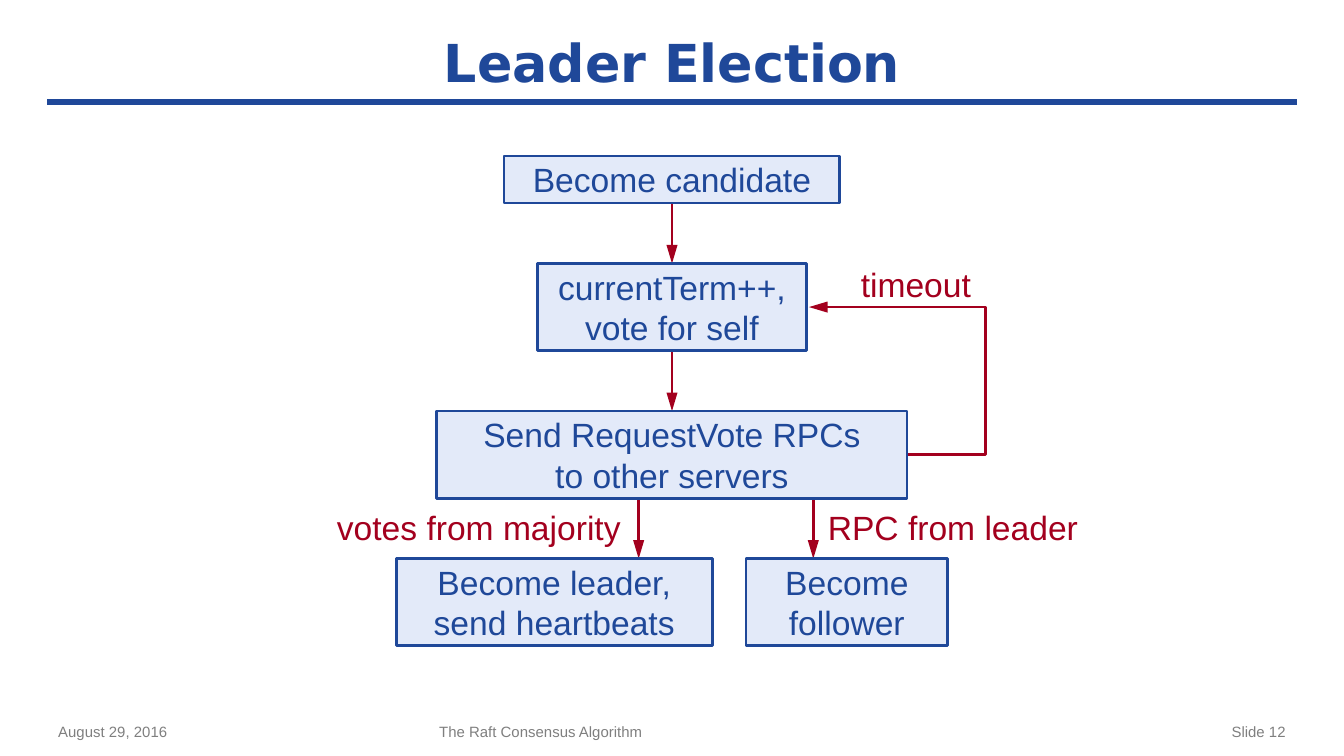
from lxml import etree
from pptx import Presentation
from pptx.dml.color import RGBColor
from pptx.enum.shapes import MSO_CONNECTOR, MSO_SHAPE
from pptx.enum.text import MSO_ANCHOR, PP_ALIGN
from pptx.oxml.ns import qn
from pptx.util import Cm, Pt

BLUE = RGBColor(0x1F, 0x48, 0x99)
PALE = RGBColor(0xE3, 0xEA, 0xF9)
RED = RGBColor(0xA3, 0x00, 0x1E)
GRAY = RGBColor(0x7F, 0x7F, 0x7F)
LEFT, CENTER, RIGHT = PP_ALIGN.LEFT, PP_ALIGN.CENTER, PP_ALIGN.RIGHT
TOP, MIDDLE = MSO_ANCHOR.TOP, MSO_ANCHOR.MIDDLE
STRAIGHT, RECT = MSO_CONNECTOR.STRAIGHT, MSO_SHAPE.RECTANGLE


class Deck:
    font = "Arial"
    size = 18
    leading = Pt(21.6)
    width = 1.5

    def __init__(self, s):
        self.s = s

    def fill_text(self, sp, lines, color, size, align, anchor, font=None,
                  bold=False, inset=0, leading=None, wrap=True):
        tf = sp.text_frame
        tf.word_wrap = wrap
        tf.vertical_anchor = anchor
        tf.margin_left = tf.margin_right = Cm(inset)
        tf.margin_top = tf.margin_bottom = 0
        for i, line in enumerate(lines):
            p = tf.add_paragraph() if i else tf.paragraphs[0]
            p.alignment = align
            p.line_spacing = leading
            r = p.add_run()
            r.text = line
            r.font.name = font or self.font
            r.font.size = Pt(size)
            r.font.bold = bold
            r.font.color.rgb = color

    def text(self, x, y, w, h, line, color, size, align, **style):
        sp = self.s.shapes.add_textbox(Cm(x), Cm(y), Cm(w), Cm(h))
        self.fill_text(sp, [line], color, size, align, MIDDLE, inset=0.25, **style)

    def label(self, x, y, w, line):
        sp = self.s.shapes.add_textbox(Cm(x), Cm(y), Cm(w), Cm(0.76))
        self.fill_text(sp, [line], RED, self.size, CENTER, TOP,
                       leading=self.leading, wrap=False)

    def box(self, x, y, w, h, *lines):
        sp = self.s.shapes.add_shape(RECT, Cm(x), Cm(y), Cm(w), Cm(h))
        sp.shadow.inherit = False
        sp.fill.solid()
        sp.fill.fore_color.rgb = PALE
        sp.line.color.rgb = BLUE
        sp.line.width = Pt(self.width)
        self.fill_text(sp, lines, BLUE, self.size, CENTER, MIDDLE,
                       leading=self.leading)

    def arrowhead(self, sp):
        ln = sp._element.spPr.find(qn("a:ln"))
        etree.SubElement(ln, qn("a:tailEnd"), type="triangle", w="med", len="lg")

    def line(self, x1, y1, x2, y2, color, width):
        sp = self.s.shapes.add_connector(STRAIGHT, Cm(x1), Cm(y1), Cm(x2), Cm(y2))
        sp.line.color.rgb = color
        sp.line.width = Pt(width)
        etree.SubElement(sp._element.spPr, qn("a:effectLst"))
        return sp

    def arrow_down(self, x, y, length):
        self.arrowhead(self.line(x, y, x, y + length, RED, self.width))

    def elbow_arrow(self, points):
        points = [(Cm(x), Cm(y)) for x, y in points]
        fb = self.s.shapes.build_freeform(*points[0])
        fb.add_line_segments(points[1:], close=False)
        sp = fb.convert_to_shape()
        sp.shadow.inherit = False
        sp.fill.background()
        sp.line.color.rgb = RED
        sp.line.width = Pt(self.width)
        self.arrowhead(sp)


def main():
    prs = Presentation()
    prs.slide_width, prs.slide_height = Cm(25.4), Cm(14.29)
    deck = Deck(prs.slides.add_slide(prs.slide_layouts[6]))

    deck.line(0.89, 1.93, 24.51, 1.93, BLUE, 3.5)
    deck.text(0.85, 0.41, 23.7, 1.52, "Leader Election", BLUE, 28, CENTER,
              font="DejaVu Sans", bold=True)

    one_line, two_lines, gap = 0.89, 1.65, 1.14
    start = 2.95
    term = start + one_line + gap
    send = term + two_lines + gap
    result = send + two_lines + gap
    middle = 12.7

    for x, y in ((middle, term), (middle, send), (12.07, result), (15.37, result)):
        deck.arrow_down(x, y - gap, gap)

    term_mid, send_mid = term + two_lines / 2, send + two_lines / 2
    deck.elbow_arrow([(17.15, send_mid), (18.62, send_mid),
                      (18.62, term_mid), (15.29, term_mid)])

    for y, w, h, lines in (
        (start, 6.35, one_line, ["Become candidate"]),
        (term, 5.08, two_lines, ["currentTerm++, vote for self"]),
        (send, 8.89, two_lines, ["Send RequestVote RPCs", "to other servers"]),
    ):
        deck.box(middle - w / 2, y, w, h, *lines)
    deck.box(7.49, result, 5.97, two_lines, "Become leader,", "send heartbeats")
    deck.box(14.1, result, 3.81, two_lines, "Become follower")

    deck.label(16.26, term, 2.1, "timeout")
    deck.label(6.35, 9.58, 5.4, "votes from majority")
    deck.label(15.62, 9.58, 4.78, "RPC from leader")

    for x, w, line, align in (
        (0.85, 6.35, "August 29, 2016", LEFT),
        (8.05, 9.53, "The Raft Consensus Algorithm", LEFT),
        (18.2, 6.35, "Slide 12", RIGHT),
    ):
        deck.text(x, 13.52, w, 0.61, line, GRAY, 8, align)

    prs.save("out.pptx")


if __name__ == "__main__":
    main()
